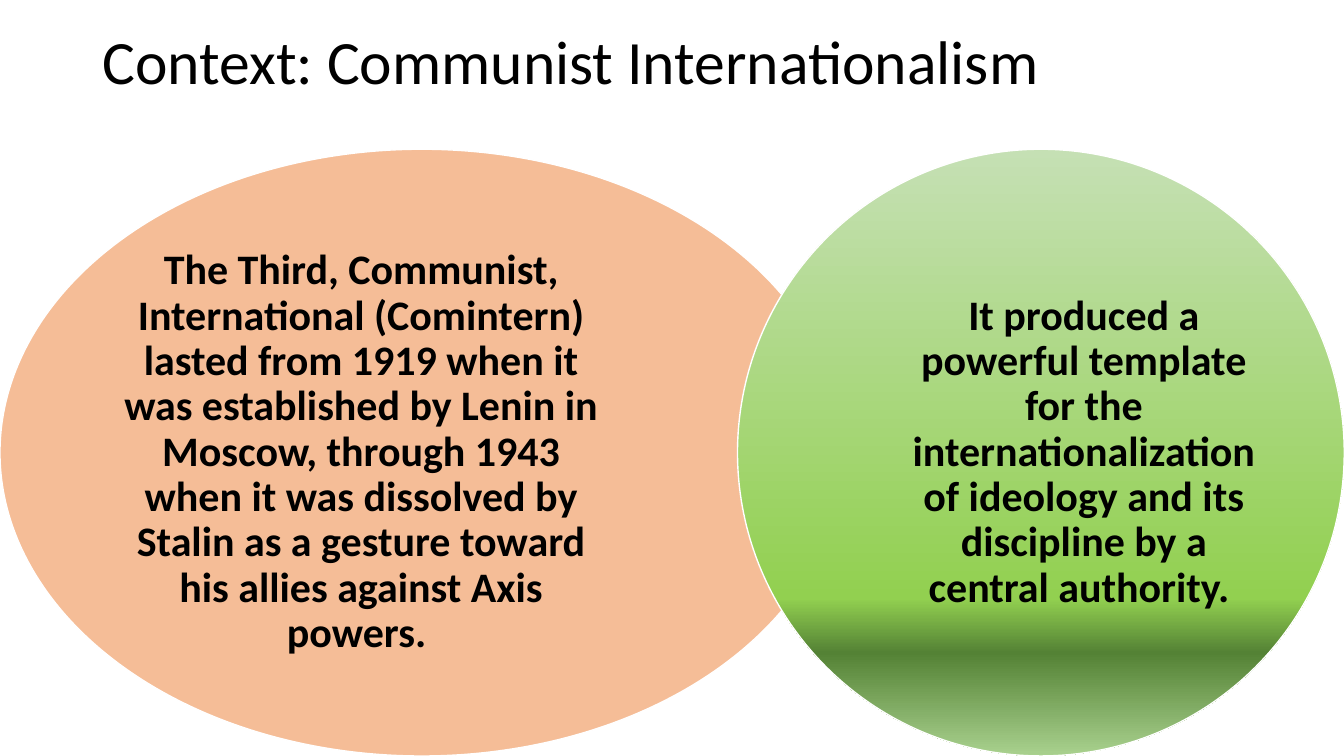
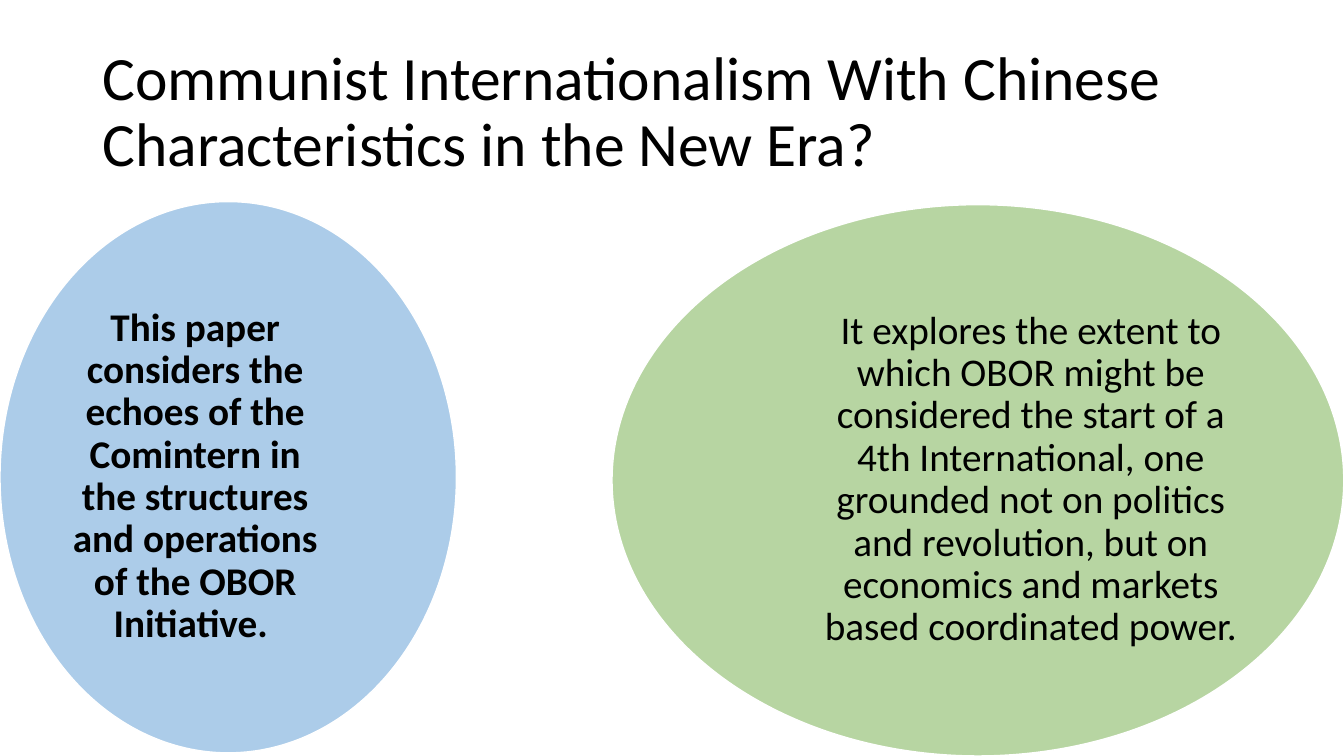
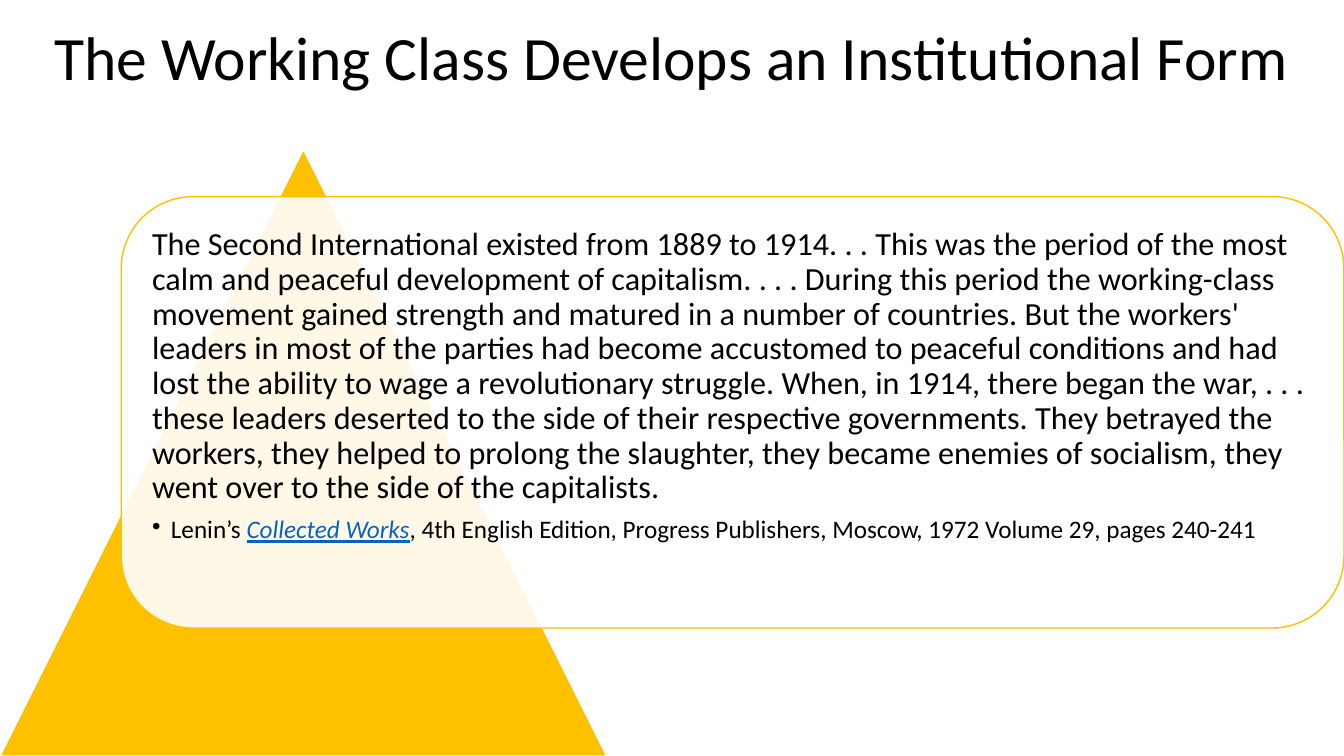
import pptx
import pptx.util
import pptx.dml.color
import pptx.enum.shapes
import pptx.enum.text
import pptx.oxml.ns
import lxml.etree

Pt = pptx.util.Pt
Shape = pptx.enum.shapes.MSO_SHAPE
Align = pptx.enum.text.PP_ALIGN
Anchor = pptx.enum.text.MSO_ANCHOR
qn = pptx.oxml.ns.qn


class Theme:
    font = "Calibri"
    black, white, link = "000000", "FFFFFF", "0563C1"
    orange, blue, green, gold = "ED7D31", "5B9BD5", "70AD47", "FFC000"
    meadow = [(0, "C5E0B4"), (74, "92D050"), (83, "548235"), (100, "A9D18E")]
    title_size, quote_size, citation_size = 44, 23, 18
    line_spacing = 0.9
    half, nearly_solid = 50, 90


# Content: places are left, top, width, height in points
OVAL_PAGES = [
    {
        "title": "Context: Communist Internationalism",
        "place": (66, 0, 828, 91.5),
        "size": 30,
        "ovals": [
            {"place": (0, 106.6, 602.6, 433.4), "fill": Theme.orange, "bold": True,
             "text_place": (84.2, 157.7, 347.8, 331.2),
             "text": "The Third, Communist, International (Comintern) lasted from 1919 "
                     "when it was established by Lenin in Moscow, through 1943 when it "
                     "was dissolved by Stalin as a gesture toward his allies against "
                     "Axis powers. "},
            {"place": (526.8, 106.6, 433.4, 433.4), "fill": Theme.meadow, "bold": True,
             "text_place": (649.4, 157.7, 249.8, 331.2),
             "text": "It produced a powerful template for the internationalization of "
                     "ideology and its discipline by a central authority. "},
        ],
    },
    {
        "title": "Communist Internationalism With Chinese Characteristics in the New Era?",
        "place": (66, 28.8, 828, 104.4),
        "size": 28,
        "ovals": [
            {"place": (0, 144, 326, 393.8), "fill": Theme.blue, "bold": True,
             "text_place": (45.4, 190, 188, 301),
             "text": "This paper considers the echoes of the Comintern in the structures "
                     "and operations of the OBOR Initiative. "},
            {"place": (437.2, 146.2, 522.7, 393.8), "fill": Theme.green, "bold": False,
             "text_place": (585.4, 192.2, 301.7, 301),
             "text": "It explores the extent to which OBOR might be considered the start "
                     "of a 4th International, one grounded not on politics and "
                     "revolution, but on economics and markets based coordinated power."},
        ],
    },
]

QUOTE_TITLE = "The Working Class Develops an Institutional Form"
QUOTE = (
    "The Second International existed from 1889 to 1914. . . This was the period of the "
    "most calm and peaceful development of capitalism. . . . During this period the "
    "working-class movement gained strength and matured in a number of countries. But the "
    "workers' leaders in most of the parties had become accustomed to peaceful conditions "
    "and had lost the ability to wage a revolutionary struggle. When, in 1914, there began "
    "the war, . . . these leaders deserted to the side of their respective governments. "
    "They betrayed the workers, they helped to prolong the slaughter, they became enemies "
    "of socialism, they went over to the side of the capitalists."
)
CITATION = [
    ("Lenin’s ", False),
    ("Collected Works", True),
    (", 4th English Edition, Progress Publishers, Moscow, 1972 Volume 29, "
     "pages 240-241", False),
]


def points(place):
    return [Pt(length) for length in place]


def colour(code):
    return pptx.dml.color.RGBColor.from_string(code)


def style(para, size, align=Align.LEFT, bold=False):
    para.alignment = align
    para.line_spacing = Theme.line_spacing
    font = para.font
    font.name, font.size, font.bold = Theme.font, Pt(size), bold
    font.color.rgb = colour(Theme.black)


def add_page(title, place, align=Align.LEFT):
    page = deck.slides.add_slide(deck.slide_layouts[5])
    box = page.shapes.title
    box.left, box.top, box.width, box.height = points(place)
    frame = box.text_frame
    frame.text = title
    frame.word_wrap = True
    frame.auto_size = pptx.enum.text.MSO_AUTO_SIZE.NONE
    frame.vertical_anchor = Anchor.MIDDLE
    style(frame.paragraphs[0], Theme.title_size, align)
    return page


def paint(shape, fill, opacity):
    """Fill with one colour, or with a list of (percent, colour) from top to bottom."""
    if isinstance(fill, list):
        shape.fill.gradient()
        shape.fill.gradient_angle = 270
        stops = shape.element.spPr.find(".//" + qn("a:gsLst"))
        for stop in list(stops):
            stops.remove(stop)
        for percent, code in fill:
            stop = lxml.etree.SubElement(stops, qn("a:gs"), pos=str(percent * 1000))
            lxml.etree.SubElement(stop, qn("a:srgbClr"), val=code)
        return
    shape.fill.solid()
    shape.fill.fore_color.rgb = colour(fill)
    if opacity < 100:
        code = shape.element.spPr.find(qn("a:solidFill")).find(qn("a:srgbClr"))
        lxml.etree.SubElement(code, qn("a:alpha"), val=str(opacity * 1000))


def add_figure(page, kind, place, fill, opacity=100, line=Theme.white):
    shape = page.shapes.add_shape(kind, *points(place))
    shape.shadow.inherit = False
    paint(shape, fill, opacity)
    shape.line.color.rgb = colour(line)
    shape.line.width = Pt(1)


def add_text_frame(page, place, inset, anchor):
    frame = page.shapes.add_textbox(*points(place)).text_frame
    frame.word_wrap = True
    frame.vertical_anchor = anchor
    frame.margin_left = frame.margin_right = Pt(inset)
    frame.margin_top = frame.margin_bottom = Pt(inset)
    return frame


def build_oval_page(content):
    page = add_page(content["title"], content["place"])
    for oval in content["ovals"]:
        add_figure(page, Shape.OVAL, oval["place"], oval["fill"], Theme.half)
        frame = add_text_frame(page, oval["text_place"], 0, Anchor.MIDDLE)
        frame.text = oval["text"]
        style(frame.paragraphs[0], content["size"], Align.CENTER, oval["bold"])


def build_quote_page():
    page = add_page(QUOTE_TITLE, (0, 0, 960, 86.4), Align.CENTER)
    add_figure(page, Shape.ISOSCELES_TRIANGLE, (0, 106.6, 433.4, 433.4), Theme.gold)
    add_figure(page, Shape.ROUNDED_RECTANGLE, (86.6, 140.4, 873.4, 308.2), Theme.white,
               Theme.nearly_solid, Theme.gold)
    frame = add_text_frame(page, (101.5, 155.5, 843.1, 277.9), 7.2, Anchor.TOP)
    frame.text = QUOTE
    style(frame.paragraphs[0], Theme.quote_size)
    frame.paragraphs[0].space_after = Pt(8)

    # Bulleted citation
    para = frame.add_paragraph()
    para.level = 1
    properties = para._p.get_or_add_pPr()
    properties.set("marL", str(Pt(13.5)))
    properties.set("indent", str(-Pt(13.5)))
    lxml.etree.SubElement(properties, qn("a:buChar"), char="•")
    style(para, Theme.citation_size)
    for text, is_work in CITATION:
        span = para.add_run()
        span.text = text
        if is_work:
            span.font.italic = span.font.underline = True
            span.font.color.rgb = colour(Theme.link)


deck = pptx.Presentation()
deck.slide_width, deck.slide_height = Pt(960), Pt(540)
for oval_page in OVAL_PAGES:
    build_oval_page(oval_page)
build_quote_page()
deck.save("out.pptx")
